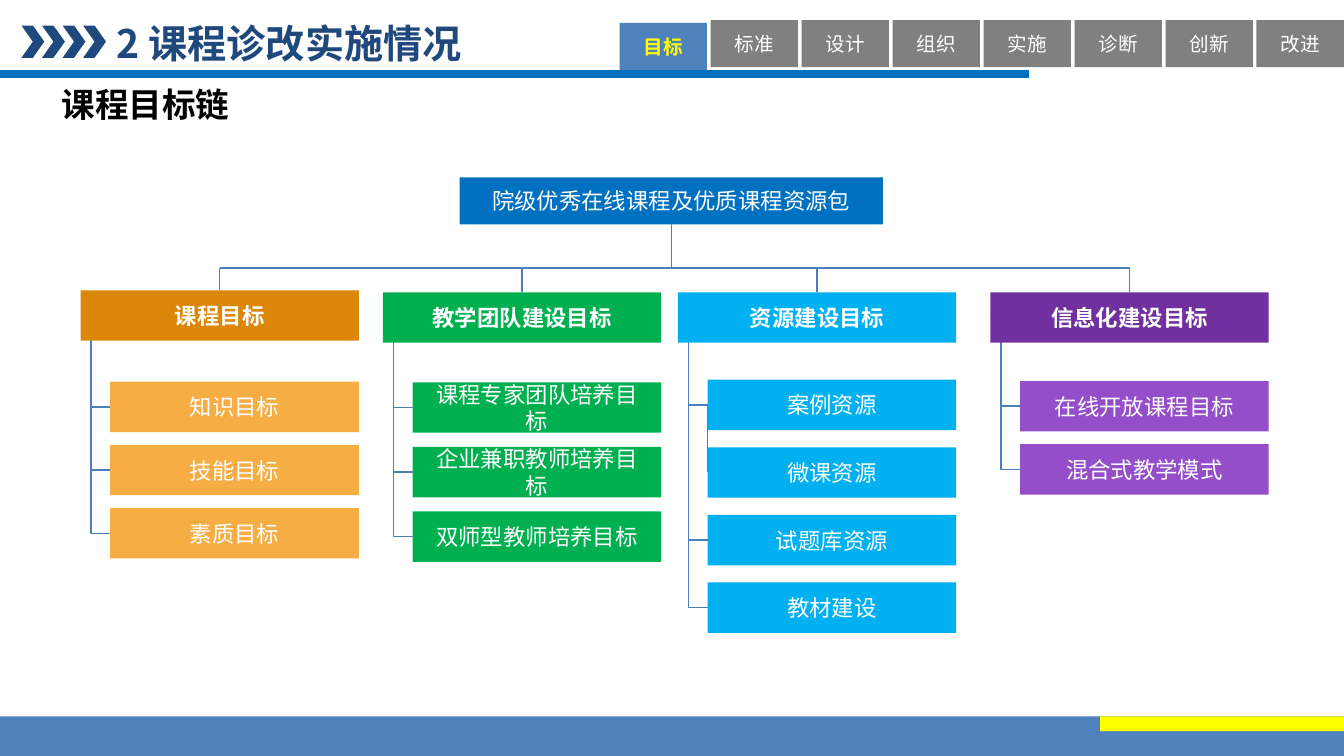
from lxml import etree
from pptx import Presentation
from pptx.dml.color import RGBColor
from pptx.enum.shapes import MSO_CONNECTOR, MSO_SHAPE
from pptx.enum.text import MSO_ANCHOR, MSO_AUTO_SIZE, PP_ALIGN
from pptx.oxml.ns import qn
from pptx.util import Inches, Pt

RECT, CHEVRON = MSO_SHAPE.RECTANGLE, MSO_SHAPE.CHEVRON
STRAIGHT, ELBOW = MSO_CONNECTOR.STRAIGHT, MSO_CONNECTOR.ELBOW
LEFT, CENTER = PP_ALIGN.LEFT, PP_ALIGN.CENTER
TOP, MIDDLE = MSO_ANCHOR.TOP, MSO_ANCHOR.MIDDLE
FIXED = MSO_AUTO_SIZE.NONE
SANS, LATIN = "Noto Sans CJK SC", "Calibri"
HUES = {
    "white": "FFFFFF", "black": "000000", "gray": "808080", "steel": "4F81BD",
    "wire": "4B7EBC", "navy": "1F497D", "blue": "0070C0", "yellow": "FFFF00",
    "amber": "DC870A", "sand": "F6AE44", "green": "00B050", "sky": "00B0F0",
    "plum": "7030A0", "lilac": "954ECA",
}

deck = Presentation()
deck.slide_width = Inches(10)
deck.slide_height = deck.slide_width * 9 // 16
CELL = deck.slide_width / 100
slide = deck.slides.add_slide(deck.slide_layouts[5])
shapes = slide.shapes


def set_box(shape, area, hue, text="", size=12, tone="white", bold=False, font=SANS):
    shape.left, shape.top, shape.width, shape.height = (round(n * CELL) for n in area)
    if hue:
        shape.shadow.inherit = False
        shape.fill.solid()
        shape.fill.fore_color.rgb = RGBColor.from_string(HUES[hue])
        shape.line.fill.background()
    if text:
        frame = shape.text_frame
        frame.text = text
        frame.word_wrap = True
        frame.auto_size = FIXED
        frame.vertical_anchor = MIDDLE if hue else TOP
        line = frame.paragraphs[0]
        line.alignment = CENTER if hue else LEFT
        face = line.runs[0].font
        face.size, face.bold, face.name = Pt(size), bold, font
        face.color.rgb = RGBColor.from_string(HUES[tone])
        east = etree.SubElement(line.runs[0]._r.get_or_add_rPr(), qn("a:ea"))
        east.set("typeface", SANS)
    return shape


def add_wire(kind, ends, tone="wire", width=0.75):
    wire = shapes.add_connector(kind, *(round(n * CELL) for n in ends))
    wire.line.color.rgb = RGBColor.from_string(HUES[tone])
    wire.line.width = Pt(width)
    etree.SubElement(wire._element.spPr, qn("a:effectLst"))
    return wire


title = set_box(shapes.title, (7.95, 1, 49.3, 4), None, "2 课程诊改实施情况", 21, "navy", True)
frame = title.text_frame
frame.margin_left = frame.margin_right = Inches(0.07)
frame.margin_top = frame.margin_bottom = Inches(0.04)

for i in range(4):
    set_box(shapes.add_shape(CHEVRON, 0, 0, 0, 0), (1.6 + 1.53 * i, 1.9, 1.7, 2.4), "navy")

tabs = ["目标", "标准", "设计", "组织", "实施", "诊断", "创新", "改进"]
for i, name in enumerate(tabs):
    area = (46.1 + 6.77 * i, 1.5, 6.5, 3.5)
    look = ("gray", name, 10.5, "white", False, LATIN)
    if i == 0:
        area = (46.1, 1.7, 6.5, 3.5)
        look = ("steel", name, 10.5, "yellow", True, LATIN)
    set_box(shapes.add_shape(RECT, 0, 0, 0, 0), area, *look)

add_wire(STRAIGHT, (0, 5.5, 76.6, 5.5), "blue", 4)
topic = shapes.add_textbox(0, 0, 0, 0)
set_box(topic, (3.6, 5.75, 95.8, 4), None, "课程目标链", 18, "black", True)

BUS, HIGH, WIDE, STEP = 19.95, 3.75, 20.7, 2.2
root = shapes.add_shape(RECT, 0, 0, 0, 0)
set_box(root, (34.2, 13.2, 31.5, 3.5), "blue", "院级优秀在线课程及优质课程资源包")
trunk = add_wire(STRAIGHT, (49.95, 16.7, 49.95, BUS))
trunk.begin_connect(root, 2)

groups = [
    (6, 21.6, "amber", "sand", "课程目标", 28.4, 4.7,
     ["知识目标", "技能目标", "素质目标"]),
    (28.5, 21.75, "green", "green", "教学团队建设目标", 28.45, 4.8,
     ["课程专家团队培养目标", "企业兼职教师培养目标", "双师型教师培养目标"]),
    (50.45, 21.75, "sky", "sky", "资源建设目标", 28.25, 5.03,
     ["案例资源", "微课资源", "试题库资源", "教材建设"]),
    (73.7, 21.75, "plum", "lilac", "信息化建设目标", 28.35, 4.7,
     ["在线开放课程目标", "混合式教学模式"]),
]
mids = [group[0] + WIDE / 2 for group in groups]
add_wire(STRAIGHT, (mids[0], BUS, mids[-1], BUS))

for mid, (x, y, dark, pale, head, first, pitch, items) in zip(mids, groups):
    for i, item in enumerate(items):
        top = first + pitch * i
        end = top + HIGH / 2
        leaf = shapes.add_shape(RECT, 0, 0, 0, 0)
        set_box(leaf, (x + STEP, top, WIDE - STEP, HIGH), pale, item)
        if item == "微课资源":
            add_wire(STRAIGHT, (x + STEP, end - pitch, x + STEP, end))
            continue
        bend = add_wire(ELBOW, (x, y + HIGH / 2, x + STEP, end))
        guide = etree.SubElement(bend._element.spPr.prstGeom.get_or_add_avLst(), qn("a:gd"))
        guide.set("name", "adj1")
        guide.set("fmla", "val 35000")
    lead = shapes.add_shape(RECT, 0, 0, 0, 0)
    set_box(lead, (x, y, WIDE, HIGH), dark, head, bold=True)
    stem = add_wire(STRAIGHT, (mid, BUS, mid, y))
    stem.end_connect(lead, 0)

for hue, area in (("steel", (0, 53.3, 100, 2.95)), ("yellow", (81.85, 53.3, 18.15, 1.1))):
    set_box(shapes.add_shape(RECT, 0, 0, 0, 0), area, hue)

deck.save("out.pptx")
